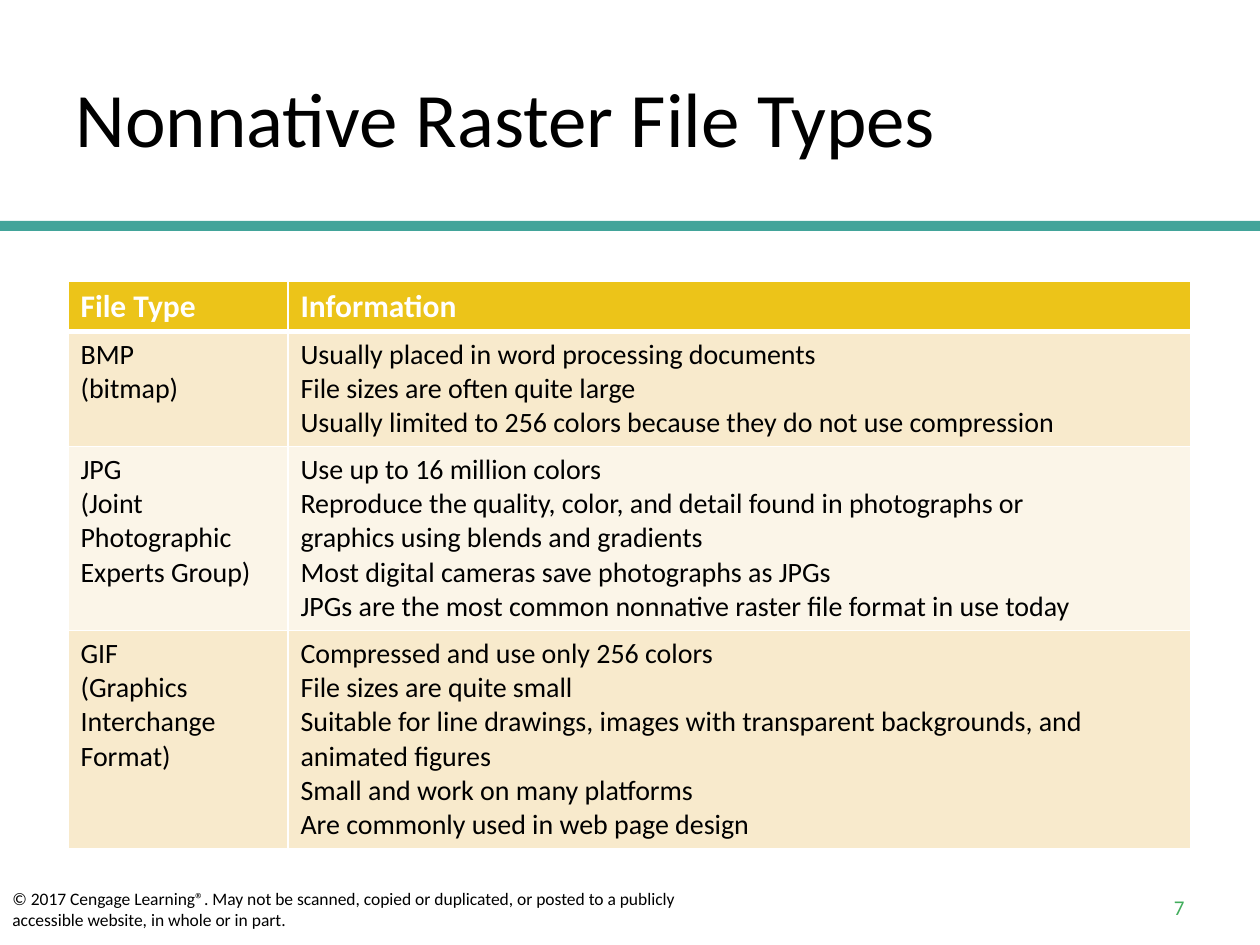
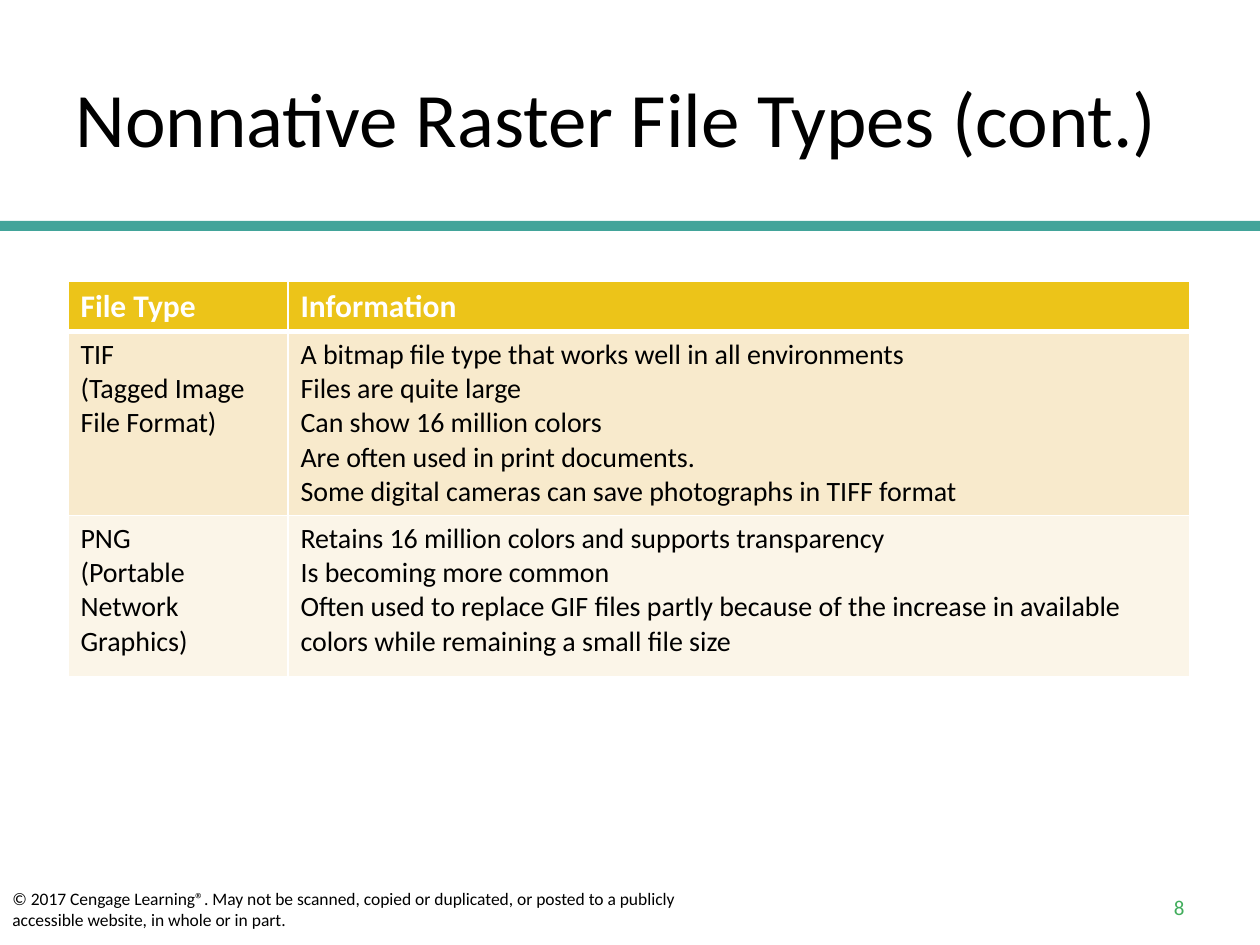
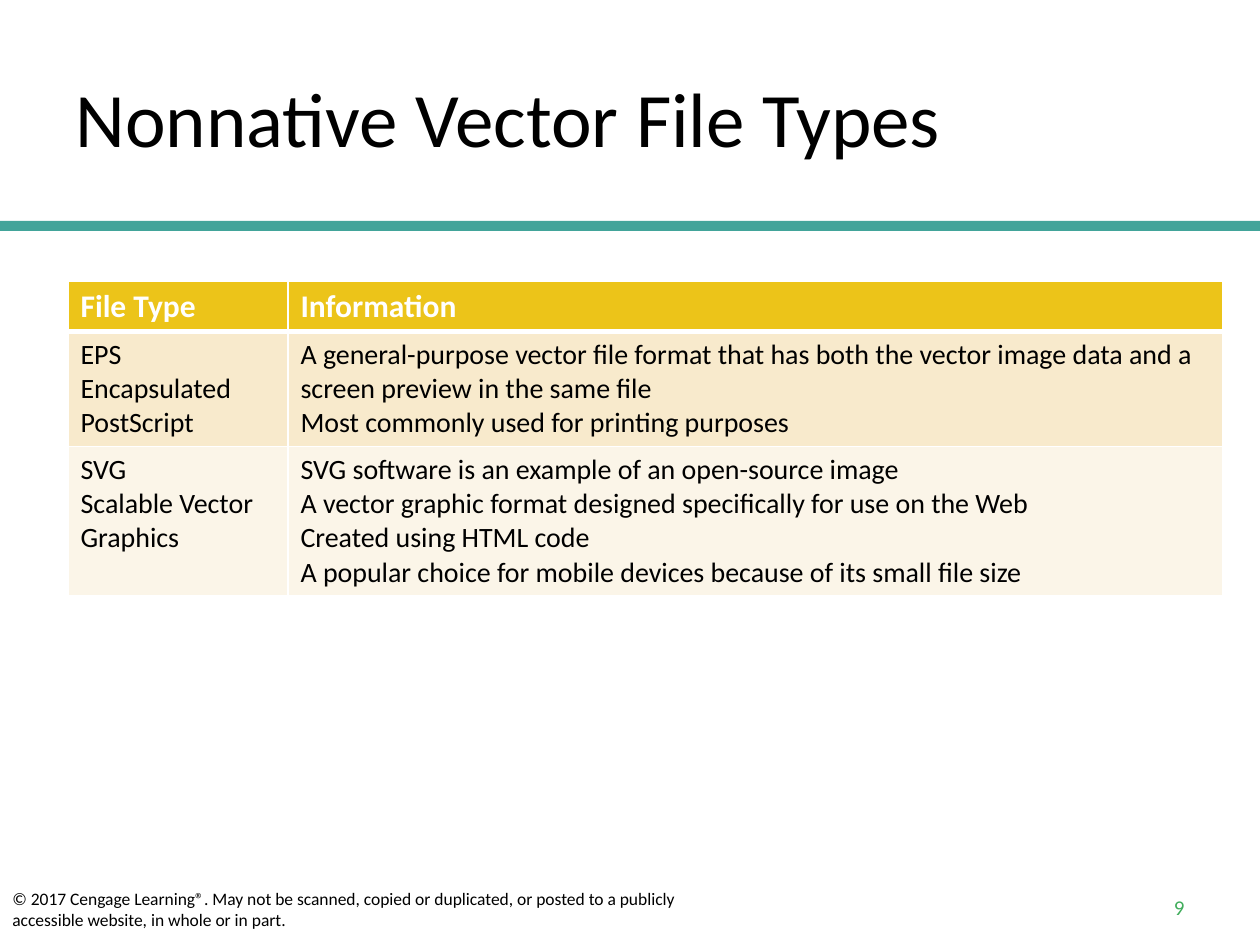
from lxml.etree import SubElement
from pptx import Presentation
from pptx.dml.color import RGBColor
from pptx.enum.shapes import MSO_SHAPE
from pptx.enum.text import MSO_ANCHOR, PP_ALIGN
from pptx.oxml.ns import qn
from pptx.util import Emu, Pt

SCALE = 914400 / 126  # EMU in one px
FONT = "Calibri"
INK = {
    "text": "000000",
    "paper": "FFFFFF",
    "band": "42A49A",
    "page": "41AD5C",
    "head": "ECC419",
    "odd": "F8EACC",
    "even": "FBF5E8",
}
RIGHTS = (
    "© 2017 Cengage Learning®. May not be scanned, copied or duplicated, "
    "or posted to a publicly accessible website, in whole or in part."
)
HEAD = (["File Type"], ["Information"])
FIRST = 7  # number of the first page
TYPE_W, HEAD_H = 220, 50

# Each deck entry: title, table width, rows of (height, type, facts)
DECK = [
    ("Nonnative Raster File Types", 1123, [
        (115, ["BMP", "(bitmap)"], [
            "Usually placed in word processing documents",
            "File sizes are often quite large",
            "Usually limited to 256 colors because they do not use compression",
        ]),
        (184, ["JPG\n(Joint Photographic", "Experts Group)"], [
            "Use up to 16 million colors",
            "Reproduce the quality, color, and detail found in photographs or",
            "graphics using blends and gradients",
            "Most digital cameras save photographs as JPGs",
            "JPGs are the most common nonnative raster file format in use today",
        ]),
        (218, ["GIF\n(Graphics Interchange Format)"], [
            "Compressed and use only 256 colors",
            "File sizes are quite small",
            "Suitable for line drawings, images with transparent backgrounds, "
            "and animated figures",
            "Small and work on many platforms",
            "Are commonly used in web page design",
        ]),
    ]),
    ("Nonnative Raster File Types (cont.)", 1122, [
        (184, ["TIF\n(Tagged Image File Format)"], [
            "A bitmap file type that works well in all environments",
            "Files are quite large",
            "Can show 16 million colors",
            "Are often used in print documents.",
            "Some digital cameras can save photographs in TIFF format",
        ]),
        (161, ["PNG\n(Portable Network", "Graphics)"], [
            "Retains 16 million colors and supports transparency",
            "Is becoming more common",
            "Often used to replace GIF files partly because of the increase in "
            "available colors while remaining a small file size",
        ]),
    ]),
    ("Nonnative Vector File Types", 1155, [
        (115, ["EPS\nEncapsulated PostScript"], [
            "A general-purpose vector file format that has both the vector "
            "image data and a screen preview in the same file",
            "Most commonly used for printing purposes",
        ]),
        (149, ["SVG\nScalable Vector Graphics"], [
            "SVG software is an example of an open-source image",
            "A vector graphic format designed specifically for use on the Web",
            "Created using HTML code",
            "A popular choice for mobile devices because of its small file size",
        ]),
    ]),
]


def px(n):
    return Emu(round(n * SCALE))


def rgb(name):
    return RGBColor.from_string(INK[name])


def write(frame, lines, size, ink="text", bold=False, align=PP_ALIGN.LEFT):
    """Fill a text frame with one paragraph per line."""
    frame.word_wrap = True
    for i, line in enumerate(lines):
        para = frame.paragraphs[0] if i == 0 else frame.add_paragraph()
        para.text = line
        para.alignment = align
        font = para.font
        font.name, font.size, font.bold = FONT, Pt(size), bold
        font.color.rgb = rgb(ink)


def add_box(slide, x, y, w, h, ink):
    box = slide.shapes.add_shape(MSO_SHAPE.RECTANGLE, px(x), px(y), px(w), px(h))
    box.shadow.inherit = False
    box.fill.solid()
    box.fill.fore_color.rgb = rgb(ink)
    box.line.fill.background()
    return box


def add_title(slide, text):
    title = slide.shapes.title
    title.left, title.top = px(63), px(38)
    title.width, title.height = px(1134), px(158)
    title.text_frame.vertical_anchor = MSO_ANCHOR.MIDDLE
    write(title.text_frame, [text], 44)


def add_frame(slide, page):
    """Band, rights line and page number."""
    add_box(slide, 0, 221, 1260, 10, "band")
    foot = add_box(slide, 0, 882, 714, 55, "paper")
    foot.text_frame.vertical_anchor = MSO_ANCHOR.TOP
    write(foot.text_frame, [RIGHTS], 10)
    box = slide.shapes.add_textbox(px(903), px(882), px(294), px(50))
    box.text_frame.vertical_anchor = MSO_ANCHOR.MIDDLE
    write(box.text_frame, [str(page)], 12, "page", align=PP_ALIGN.RIGHT)


def edge(cell, top, base):
    """White cell borders, with the top and bottom widths in points."""
    props = cell._tc.get_or_add_tcPr()
    for side, width in (("L", 1), ("R", 1), ("T", top), ("B", base)):
        line = SubElement(props, qn("a:ln" + side), w=str(Pt(width)))
        fill = SubElement(line, qn("a:solidFill"))
        SubElement(fill, qn("a:srgbClr"), val=INK["paper"])


def add_grid(slide, width, rows):
    rows = [(HEAD_H, *HEAD), *rows]
    high = sum(row[0] for row in rows)
    shape = slide.shapes.add_table(
        len(rows), 2, px(68), px(281), px(width), px(high))
    table = shape.table
    table.columns[0].width = px(TYPE_W)
    table.columns[1].width = px(width - TYPE_W)
    for r, (height, *texts) in enumerate(rows):
        table.rows[r].height = px(height)
        head = r == 0
        tint = "head" if head else "odd" if r % 2 else "even"
        for c, lines in enumerate(texts):
            cell = table.cell(r, c)
            edge(cell, 3 if r == 1 else 1, 3 if head else 1)
            cell.fill.solid()
            cell.fill.fore_color.rgb = rgb(tint)
            write(cell.text_frame, lines, 18 if head else 16,
                  "paper" if head else "text", head)


def main():
    deck = Presentation()
    deck.slide_width, deck.slide_height = px(1260), px(945)
    for page, (title, width, rows) in enumerate(DECK, FIRST):
        slide = deck.slides.add_slide(deck.slide_layouts[5])
        add_frame(slide, page)
        add_title(slide, title)
        add_grid(slide, width, rows)
    deck.save("out.pptx")


if __name__ == "__main__":
    main()
